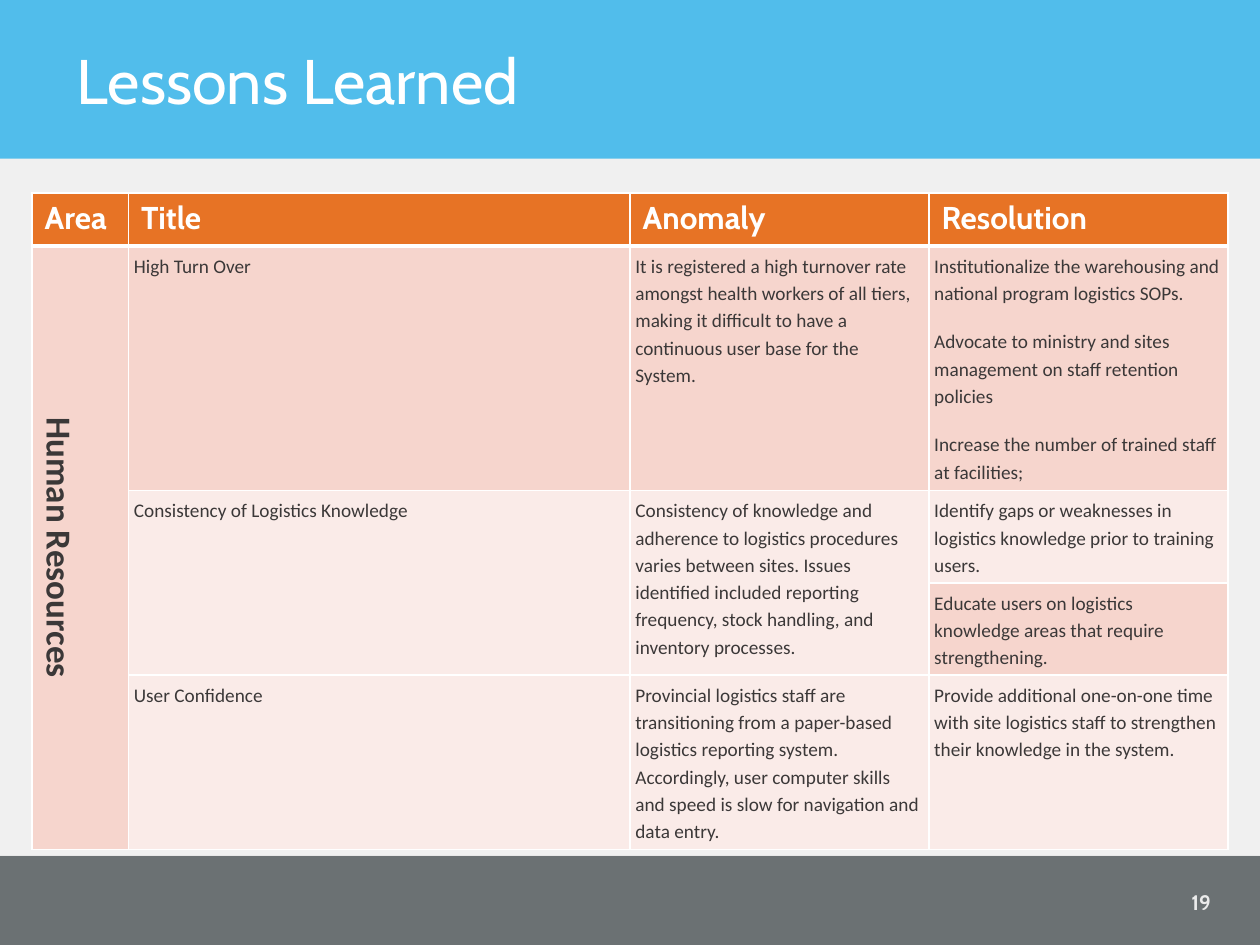
import pptx
import pptx.util
import pptx.dml.color
import pptx.enum.shapes
import pptx.enum.text
import pptx.oxml
import pptx.oxml.ns

Pt = pptx.util.Pt
ALIGN = pptx.enum.text.PP_ALIGN
ANCHOR = pptx.enum.text.MSO_ANCHOR

COLORS = {
    "page": "EBEBEB", "panel": "F0F0F0", "sky": "51BDEB", "slate": "6B7173",
    "orange": "E77325", "rose": "F6D5CD", "blush": "FAEBE8",
    "white": "FFFFFF", "ink": "3B3838",
}
HEAD_FONT, BODY_FONT = "Cabin", "Calibri"
WIDTH, HEIGHT = 720, 540


def rgb(name):
    return pptx.dml.color.RGBColor.from_string(COLORS[name])


class Deck:
    def __init__(self):
        self.prs = pptx.Presentation()
        self.prs.slide_width, self.prs.slide_height = Pt(WIDTH), Pt(HEIGHT)
        self.s = self.prs.slides.add_slide(self.prs.slide_layouts[5])
        fill = self.s.background.fill
        fill.solid()
        fill.fore_color.rgb = rgb("page")

    def run(self, p, text, size, color, font=HEAD_FONT, bold=False):
        r = p.add_run()
        r.text = text
        r.font.size, r.font.name, r.font.bold = Pt(size), font, bold
        r.font.color.rgb = rgb(color)

    def band(self, top, height, color):
        sp = self.s.shapes.add_shape(
            pptx.enum.shapes.MSO_SHAPE.RECTANGLE, 0, Pt(top), Pt(WIDTH), Pt(height))
        sp.shadow.inherit = False
        sp.fill.solid()
        sp.fill.fore_color.rgb = rgb(color)
        sp.line.fill.background()

    def title(self, text, left, top, width, height):
        sp = self.s.shapes.title
        sp.left, sp.top, sp.width, sp.height = Pt(left), Pt(top), Pt(width), Pt(height)
        sp.element.getparent().append(sp.element)  # in front of the bands
        tf = sp.text_frame
        tf.vertical_anchor = ANCHOR.MIDDLE
        p = tf.paragraphs[0]
        p.alignment, p.line_spacing = ALIGN.LEFT, Pt(37.2)
        self.run(p, text, 36, "white")

    def page_number(self, text, left, top, width, height):
        sp = self.s.shapes.add_textbox(Pt(left), Pt(top), Pt(width), Pt(height))
        tf = sp.text_frame
        tf.word_wrap = True
        tf.vertical_anchor = ANCHOR.MIDDLE
        p = tf.paragraphs[0]
        p.alignment = ALIGN.RIGHT
        self.run(p, text, 12, "page", bold=True)

    def table(self, left, top, cols, rows):
        frame = self.s.shapes.add_table(
            len(rows), len(cols), Pt(left), Pt(top), Pt(sum(cols)), Pt(sum(rows)))
        table = frame.table
        for col, width in zip(table.columns, cols):
            col.width = Pt(width)
        for row, height in zip(table.rows, rows):
            row.height = Pt(height)
        return table

    def cell_style(self, cell, color, top=1, bottom=1):
        tcPr = cell._tc.get_or_add_tcPr()
        for side, width in (("L", 1), ("R", 1), ("T", top), ("B", bottom)):
            tcPr.append(pptx.oxml.parse_xml(
                f'<a:ln{side} {pptx.oxml.ns.nsdecls("a")} w="{Pt(width)}"><a:solidFill>'
                f'<a:srgbClr val="{COLORS["white"]}"/></a:solidFill></a:ln{side}>'))
        cell.fill.solid()
        cell.fill.fore_color.rgb = rgb(color)

    def head_cell(self, cell, text):
        self.cell_style(cell, "orange", bottom=3)
        self.run(cell.text_frame.paragraphs[0], text, 18, "white", bold=True)

    def body_cell(self, cell, texts, size=11, bold=False, align=ALIGN.LEFT):
        cell.margin_left = cell.margin_right = Pt(3)
        cell.margin_top = cell.margin_bottom = Pt(3)
        tf = cell.text_frame
        for i, text in enumerate(texts):
            p = tf.add_paragraph() if i else tf.paragraphs[0]
            p.alignment, p.line_spacing = align, 1.15
            p.space_before, p.space_after = Pt(6 if i else 0), Pt(6)
            self.run(p, text, size, "ink", BODY_FONT, bold)


HEADINGS = ["Area", "Title", "Anomaly", "Resolution"]
ROW_FILLS = ["rose", "blush", "blush", "blush"]

# (row, column): paragraphs
LESSONS = {
    (1, 1): ["High Turn Over"],
    (1, 2): ["It is registered a high turnover rate amongst health workers of all tiers, "
             "making it difficult to have a continuous user base for the System."],
    (1, 3): ["Institutionalize the warehousing and national program logistics SOPs.",
             "Advocate to ministry and sites management on staff retention policies",
             "Increase the number of trained staff at facilities;"],
    (2, 1): ["Consistency of Logistics Knowledge"],
    (2, 2): ["Consistency of knowledge and adherence to logistics procedures varies between "
             "sites. Issues identified included reporting frequency, stock handling, and "
             "inventory processes."],
    (2, 3): ["Identify gaps or weaknesses in logistics knowledge prior to training users."],
    (3, 3): ["Educate users on logistics knowledge areas that require strengthening."],
    (4, 1): ["User Confidence"],
    (4, 2): ["Provincial logistics staff are transitioning from a paper-based logistics "
             "reporting system. Accordingly, user computer skills and speed is slow for "
             "navigation and data entry."],
    (4, 3): ["Provide additional one-on-one time with site logistics staff to strengthen "
             "their knowledge in the system."],
}


def main():
    deck = Deck()

    # Background bands and title
    deck.band(0, 114, "sky")
    deck.band(489, 51, "slate")
    deck.band(90.7, 398.3, "panel")
    deck.title("Lessons Learned", 36.7, 6.5, 618.5, 84.2)

    # Table grid and fills
    table = deck.table(18.3, 110.4, [55.2, 286.6, 170.8, 170.8],
                       [30.2, 139.7, 52.6, 52.6, 84.2])
    for col, text in enumerate(HEADINGS):
        deck.head_cell(table.cell(0, col), text)
    for row, fill in enumerate(ROW_FILLS, 1):
        for col in range(len(HEADINGS)):
            accent = col == 0 or (row, col) == (3, 3)
            deck.cell_style(table.cell(row, col), "rose" if accent else fill,
                            top=3 if row == 1 else 1)

    # Merged cells
    area = table.cell(1, 0)
    area.merge(table.cell(4, 0))
    for col in (1, 2):
        table.cell(2, col).merge(table.cell(3, col))

    # Table text
    deck.body_cell(area, ["Human Resources"], 20, True, ALIGN.CENTER)
    area.vertical_anchor = ANCHOR.MIDDLE
    area._tc.get_or_add_tcPr().set("vert", "vert")
    for (row, col), texts in LESSONS.items():
        deck.body_cell(table.cell(row, col), texts)

    # Page number
    deck.page_number("19", 642.2, 501.1, 56.9, 28.8)
    deck.prs.save("out.pptx")


if __name__ == "__main__":
    main()
